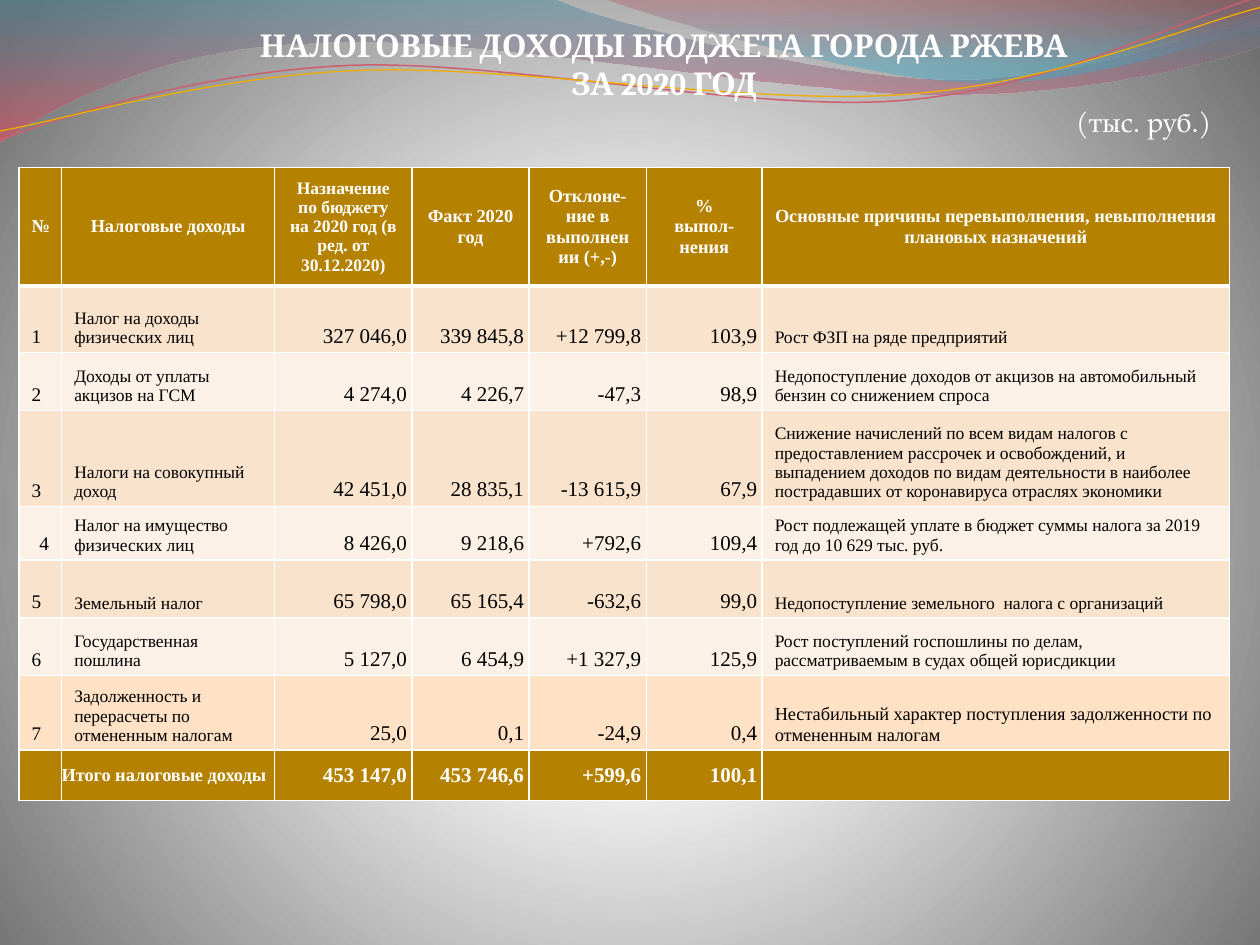
from pptx import Presentation
from pptx.dml.color import RGBColor as RGB
from pptx.enum.text import MSO_ANCHOR as Anchor, PP_ALIGN as Align
from pptx.oxml import parse_xml
from pptx.oxml.ns import nsdecls
from pptx.util import Inches, Pt

WHITE, BLACK = RGB(255, 255, 255), RGB(0, 0, 0)
GOLD, SAND, CREAM, PEACH = (RGB.from_string(c) for c in
                            ("B48200", "F9E3CC", "FCF1E7", "FFE2C5"))
GREY, TEAL, RED = RGB(0x70, 0x70, 0x70), RGB(0x3F, 0x8A, 0x9F), RGB(0xEF, 0x44, 0x5B)
WINE, BLUE = RGB(0xB8, 0x42, 0x53), RGB(0x42, 0xAB, 0xC7)
ROSE, AMBER = RGB(0xCB, 0x5F, 0x6E), RGB(0xF0, 0xAD, 0x00)
SERIF = "Times New Roman"
UNITS = 100  # outline units to the inch

COLS = [0.34, 1.69, 1.09, 0.93, 0.93, 0.92, 3.71]
ROWS = [0.94, 0.53, 0.46, 0.76, 0.42, 0.46, 0.46, 0.59, 0.4]
HEAD = ["№", "Налоговые доходы",
        "Назначение по бюджету на 2020 год (в ред. от 30.12.2020)",
        "Факт 2020 год", "Отклоне-ние в выполнении (+,-)",
        "%\nвыпол-нения",
        "Основные причины перевыполнения, невыполнения плановых назначений"]
BODY = [
    ["1", "Налог на доходы физических лиц", "327 046,0", "339 845,8",
     "+12 799,8", "103,9", "Рост ФЗП на ряде предприятий"],
    ["2", "Доходы от уплаты акцизов на ГСМ", "4 274,0", "4 226,7",
     "-47,3", "98,9", "Недопоступление доходов от акцизов на автомобильный "
     "бензин со снижением спроса"],
    ["3", "Налоги на совокупный доход", "42 451,0", "28 835,1",
     "-13 615,9", "67,9", "Снижение начислений по всем видам налогов с "
     "предоставлением рассрочек и освобождений, и выпадением доходов по видам "
     "деятельности в наиболее пострадавших от коронавируса отраслях экономики"],
    ["4", "Налог на имущество физических лиц", "8 426,0", "9 218,6",
     "+792,6", "109,4", "Рост подлежащей уплате в бюджет суммы налога за 2019 "
     "год до 10 629 тыс. руб."],
    ["5", "Земельный налог", "65 798,0", "65 165,4",
     "-632,6", "99,0", "Недопоступление земельного  налога с организаций"],
    ["6", "Государственная пошлина", "5 127,0", "6 454,9",
     "+1 327,9", "125,9", "Рост поступлений госпошлины по делам, "
     "рассматриваемым в судах общей юрисдикции"],
    ["7", "Задолженность и перерасчеты по отмененным налогам", "25,0", "0,1",
     "-24,9", "0,4", "Нестабильный характер поступления задолженности по "
     "отмененным налогам"],
]
TOTAL = ["", "Итого налоговые доходы", "453 147,0", "453 746,6",
         "+599,6", "100,1", ""]

# Each step is a line (x, y) or a curve (two control points, end point).
BIG = [(0, 0), (4.4, -0.01), (4.76, 0.17, 6.64, 0.63, 7.58, 0.63),
       (8.53, 0.63, 9.58, 0.26, 10, 0.09), (10.01, 0.36),
       (9.83, 0.44, 8.7, 0.76, 7.46, 0.75), (6.22, 0.75, 3.82, 0.28, 2.57, 0.34),
       (1.29, 0.36, 0.46, 0.83, -0.01, 1.13), (0, 0)]
SMALL = [(4.79, -0.01), (5.09, 0.11, 6.82, 0.62, 7.69, 0.65),
         (8.56, 0.69, 9.61, 0.32, 10, 0.21), (10, 0), (4.79, -0.01)]
UPPER = [(0, 1.11), (0.48, 0.93, 1.58, 0.57, 2.77, 0.52),
         (3.95, 0.47, 5.93, 0.89, 7.13, 0.8), (8.33, 0.71, 9.38, 0.15, 9.98, -0.02)]
LOWER = [(0, 1.04), (0.47, 0.96, 1.64, 0.61, 2.83, 0.56),
         (4.03, 0.51, 5.97, 0.84, 7.17, 0.75), (8.36, 0.67, 9.41, 0.21, 10, 0.06)]


def grad(stops, way):
    """Gradient fill from (position, colour, opacity) in percent."""
    marks = "".join(
        f'<a:gs pos="{p * 1000}"><a:srgbClr val="{c}"><a:alpha val="{o * 1000}"/>'
        f'</a:srgbClr></a:gs>' for p, c, o in stops)
    return f'<a:gradFill {nsdecls("a")}><a:gsLst>{marks}</a:gsLst>{way}</a:gradFill>'


def backdrop(slide):
    way = ('<a:path path="circle"><a:fillToRect l="10000" t="110000" '
           'r="10000" b="100000"/></a:path>')
    fill = grad([(0, WHITE, 100), (25, WHITE, 100), (100, GREY, 100)], way)
    slide.element.cSld.insert(0, parse_xml(
        f'<p:bg {nsdecls("p", "a")}><p:bgPr>{fill}<a:effectLst/></p:bgPr></p:bg>'))


def bend(shape, steps, left, top):
    """Turn the straight parts that stand for curves into Bezier curves."""
    parts = shape.element.spPr.findall(".//{*}lnTo")
    for part, step in zip(parts, steps[1:]):
        if len(step) == 6:
            pts = "".join(f'<a:pt x="{x - left}" y="{y - top}"/>'
                          for x, y in zip(step[::2], step[1::2]))
            curve = f'<a:cubicBezTo {nsdecls("a")}>{pts}</a:cubicBezTo>'
            part.getparent().replace(part, parse_xml(curve))


def outline(slide, steps):
    steps = [[round(v * UNITS) for v in step] for step in steps]
    ends = [step[-2:] for step in steps]
    pen = slide.shapes.build_freeform(*ends[0], scale=Inches(1) / UNITS)
    pen.add_line_segments(ends[1:], close=False)
    shape = pen.convert_to_shape()
    bend(shape, steps, min(x for x, _ in ends), min(y for _, y in ends))
    shape.shadow.inherit = False
    shape.fill.background()
    return shape


def wave(slide, steps, stops):
    shape = outline(slide, steps)
    shape.line.fill.background()
    old = shape.element.spPr.find("{*}noFill")
    fill = parse_xml(grad(stops, '<a:lin ang="5400000" scaled="0"/>'))
    old.getparent().replace(old, fill)


def strand(slide, steps, color, width):
    line = outline(slide, steps).line
    line.color.rgb, line.width = color, Pt(width)


def write(frame, text, align, color, **font):
    frame.text = text
    for para in frame.paragraphs:
        para.alignment = align
        for run in para.runs:
            for key, val in font.items():
                setattr(run.font, key, val)
            run.font.color.rgb = color


def place(shape, left, top, width, height):
    box = dict(left=left, top=top, width=width, height=height)
    for key, val in box.items():
        setattr(shape, key, Inches(val))


def edge(cell, base):
    props = cell._tc.get_or_add_tcPr()
    for i, (side, wide) in enumerate(dict(L=1, R=1, T=1, B=base).items()):
        props.insert(i, parse_xml(
            f'<a:ln{side} {nsdecls("a")} w="{Pt(wide)}"><a:solidFill>'
            f'<a:srgbClr val="{WHITE}"/></a:solidFill></a:ln{side}>'))


def style(row, col):
    """Size, alignment, anchor and margins (left, top, right, bottom)."""
    if row == 0:
        return 10 if col == 2 else 10.5, Align.CENTER, Anchor.MIDDLE, (0.1, 0.05, 0.1, 0.05)
    last = row == len(ROWS) - 1
    anchor = Anchor.MIDDLE if last else Anchor.BOTTOM
    if 2 <= col <= 5:
        return 12, Align.RIGHT, anchor, (0, 0, 0.04, 0 if last else 0.04)
    if last:
        return 10.5, Align.LEFT, anchor, (0, 0, 0, 0)
    size = 11 if col == 0 else 10.5 if (row, col) == (7, 6) else 10
    align = Align.RIGHT if (row, col) == (4, 0) else Align.LEFT
    return size, align, anchor, (0.1, 0.05, 0.1, 0.04)


def grid(slide):
    table = slide.shapes.add_table(len(ROWS), len(COLS), Inches(0.15), Inches(1.33),
                                   Inches(sum(COLS)), Inches(sum(ROWS))).table
    table.horz_banding = False
    for col, width in zip(table.columns, COLS):
        col.width = Inches(width)
    for row, height in zip(table.rows, ROWS):
        row.height = Inches(height)
    fills = [GOLD] + [SAND, CREAM] * 3 + [PEACH, GOLD]
    for r, (texts, fill) in enumerate(zip([HEAD, *BODY, TOTAL], fills)):
        bold = fill == GOLD
        for c, text in enumerate(texts):
            cell = table.cell(r, c)
            size, align, anchor, gaps = style(r, c)
            for side, gap in zip(("left", "top", "right", "bottom"), gaps):
                setattr(cell, "margin_" + side, Inches(gap))
            cell.vertical_anchor = anchor
            cell.fill.solid()
            cell.fill.fore_color.rgb = fill
            edge(cell, 3 if r == 0 else 1)
            write(cell.text_frame, text, align, WHITE if bold else BLACK,
                  size=Pt(size), name=SERIF, bold=bold)


def main():
    deck = Presentation()
    deck.slide_width, deck.slide_height = Inches(10), Inches(7.5)
    slide = deck.slides.add_slide(deck.slide_layouts[5])
    backdrop(slide)
    wave(slide, BIG, [(0, TEAL, 45), (100, RED, 55)])
    wave(slide, SMALL, [(0, WINE, 30), (80, BLUE, 45)])
    strand(slide, UPPER, ROSE, 0.85)
    strand(slide, LOWER, AMBER, 0.75)

    unit = slide.shapes.add_textbox(*map(Inches, (8.44, 0.78, 1.41, 0.37)))
    write(unit.text_frame, "(тыс. руб.)", Align.LEFT, WHITE, size=Pt(16),
          name="TeX Gyre Pagella")
    grid(slide)

    title = slide.shapes.title
    place(title, 1.95, 0.16, 6.64, 0.78)
    title.text_frame.vertical_anchor = Anchor.TOP
    write(title.text_frame, "НАЛОГОВЫЕ ДОХОДЫ БЮДЖЕТА ГОРОДА РЖЕВА\nЗА 2020 ГОД",
          Align.CENTER, WHITE, size=Pt(18), name="Cambria", bold=True)
    for para in title.text_frame.paragraphs:
        para.space_before = Pt(0)
    slide.shapes._spTree.append(title.element)
    deck.save("out.pptx")


if __name__ == "__main__":
    main()
